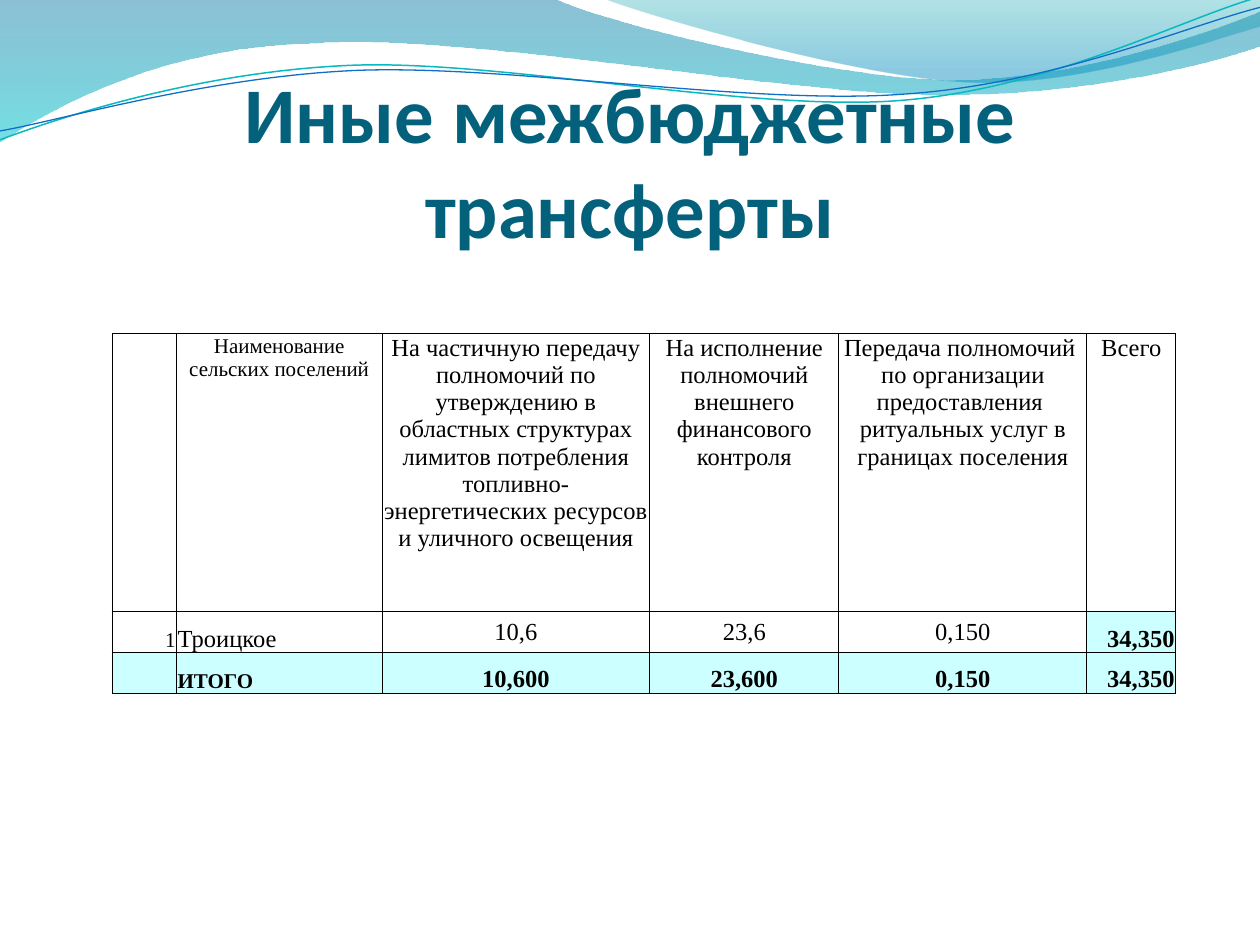
import math

import pptx
import pptx.dml.color
import pptx.enum.text
import pptx.oxml
import pptx.oxml.ns
import pptx.util
from pptx.util import Cm, Pt

ALIGN = pptx.enum.text.PP_ALIGN
ANCHOR = pptx.enum.text.MSO_ANCHOR
TILT = 2.7
TILT_CENTER = (12.7, 1.47)


def color(value):
    return pptx.dml.color.RGBColor.from_string(value)


def assign(obj, values):
    for name, value in values.items():
        setattr(obj, name, value)


def rotate(point, degrees, center):
    c, n = math.cos(math.radians(degrees)), math.sin(math.radians(degrees))
    dx, dy = point[0] - center[0], point[1] - center[1]
    return center[0] + dx * c - dy * n, center[1] + dx * n + dy * c


class Deck:
    title_font = {"name": "Calibri", "size": Pt(45), "bold": True}
    table_font = "Times New Roman"
    title_color, text_color, border_color, total_fill = "04617B", "000000", "000000", "CCFFFF"

    def __init__(self, prs):
        self.s = prs.slides.add_slide(prs.slide_layouts[5])

    def freeform(self, start, segments, close):
        nodes = [(Cm(x), Cm(y)) for segment in segments for x, y in segment]
        builder = self.s.shapes.build_freeform(Cm(start[0]), Cm(start[1]))
        builder.add_line_segments(nodes, close=close)
        sp = builder.convert_to_shape()
        sp.shadow.inherit = False
        lines = iter(list(sp._element.iter(pptx.oxml.ns.qn("a:lnTo"))))
        for segment in segments:
            group = [next(lines) for _ in segment]
            if len(group) == 3:
                bezier = pptx.oxml.parse_xml(f'<a:cubicBezTo {pptx.oxml.ns.nsdecls("a")}/>')
                group[0].addprevious(bezier)
                for line in group:
                    bezier.append(line[0])
                    line.getparent().remove(line)
        return sp

    def wave(self, start, segments, stops):
        sp = self.freeform(start, [*segments, [start]], True)
        sp.line.fill.background()
        sp.fill.gradient()
        sp.fill.gradient_angle = 270
        for stop, (position, rgb, opacity) in zip(sp.fill.gradient_stops, stops):
            stop.position = position
            stop.color.rgb = color(rgb)
            clr = stop._gs.find(pptx.oxml.ns.qn("a:srgbClr"))
            clr.append(pptx.oxml.parse_xml(
                f'<a:alpha {pptx.oxml.ns.nsdecls("a")} val="{opacity * 1000}"/>'))

    def ribbon(self, start, segments, rgb, width):
        level = [[rotate(point, TILT, TILT_CENTER) for point in segment] for segment in segments]
        sp = self.freeform(rotate(start, TILT, TILT_CENTER), level, False)
        sp.rotation = 360 - TILT
        sp.fill.background()
        sp.line.color.rgb = color(rgb)
        sp.line.width = Pt(width)

    def title(self, text, left, top, width, height):
        sp = self.s.shapes.title
        self.s.shapes._spTree.append(sp._element)
        assign(sp, {"left": Cm(left), "top": Cm(top), "width": Cm(width), "height": Cm(height)})
        tf = sp.text_frame
        assign(tf, {"margin_left": 0, "margin_right": 0, "margin_top": Cm(0.13), "margin_bottom": 0,
                    "word_wrap": True, "vertical_anchor": ANCHOR.BOTTOM,
                    "auto_size": pptx.enum.text.MSO_AUTO_SIZE.NONE})
        p = tf.paragraphs[0]
        p.alignment = ALIGN.CENTER
        r = p.add_run()
        r.text = text
        assign(r.font, self.title_font)
        r.font.color.rgb = color(self.title_color)

    def cell(self, cell, text, size, align, anchor, total):
        assign(cell, {"margin_left": Cm(0.02), "margin_right": Cm(0.02), "margin_top": Cm(0.02),
                      "margin_bottom": 0, "vertical_anchor": anchor})
        for side in "LRTB":
            cell._tc.get_or_add_tcPr().append(pptx.oxml.parse_xml(
                f'<a:ln{side} {pptx.oxml.ns.nsdecls("a")} w="{Pt(0.5)}"><a:solidFill>'
                f'<a:srgbClr val="{self.border_color}"/></a:solidFill></a:ln{side}>'))
        if total:
            cell.fill.solid()
            cell.fill.fore_color.rgb = color(self.total_fill)
        else:
            cell.fill.background()
        if not text:
            return
        p = cell.text_frame.paragraphs[0]
        p.alignment = align
        r = p.add_run()
        r.text = text
        assign(r.font, {"name": self.table_font, "size": Pt(size), "bold": total})
        r.font.color.rgb = color(self.text_color)

    def table(self, rows, left, top, widths, heights):
        frame = self.s.shapes.add_table(len(rows), len(widths), Cm(left), Cm(top),
                                        Cm(sum(widths)), Cm(sum(heights)))
        table = frame.table
        assign(table, {"first_row": False, "horz_banding": False})
        for column, width in zip(table.columns, widths):
            column.width = Cm(width)
        for row, height in zip(table.rows, heights):
            row.height = Cm(height)
        body_align = [ALIGN.RIGHT, ALIGN.LEFT, ALIGN.CENTER, ALIGN.CENTER, ALIGN.CENTER, ALIGN.RIGHT]
        small = {(0, 1), (1, 0), (2, 1)}
        last_row, last_col = len(rows) - 1, len(widths) - 1
        for i, row in enumerate(rows):
            for j, text in enumerate(row):
                middle = i == 1 and 2 <= j < last_col
                anchor = ANCHOR.TOP if i == 0 else ANCHOR.MIDDLE if middle else ANCHOR.BOTTOM
                align = ALIGN.CENTER if i == 0 else body_align[j]
                total = i == last_row or (i > 0 and j == last_col)
                self.cell(table.cell(i, j), text, 12 if (i, j) in small else 14, align, anchor, total)


def main():
    prs = pptx.Presentation()
    assign(prs, {"slide_width": Cm(25.4), "slide_height": Cm(19.05)})
    deck = Deck(prs)
    deck.wave((0, 0), [[(11.18, -0.03)],
                       [(12.09, 0.43), (16.87, 1.6), (19.25, 1.6)],
                       [(21.67, 1.6), (24.33, 0.66), (25.4, 0.23)],
                       [(25.43, 0.91)],
                       [(24.97, 1.12), (22.1, 1.93), (18.95, 1.91)],
                       [(15.8, 1.91), (9.7, 0.71), (6.53, 0.86)],
                       [(3.28, 0.91), (1.17, 2.11), (-0.03, 2.87)]],
              [(0, "0074A1", 45), (1, "00C6CF", 55)])
    deck.wave((12.17, -0.03), [[(12.93, 0.28), (17.32, 1.57), (19.53, 1.65)],
                               [(21.74, 1.75), (24.41, 0.81), (25.4, 0.53)],
                               [(25.4, 0)]],
              [(0, "00A1A9", 30), (0.8, "008BBF", 45)])
    deck.ribbon((0, 2.82), [[(1.22, 2.36), (4.01, 1.45), (7.04, 1.32)],
                            [(10.03, 1.19), (15.06, 2.26), (18.11, 2.03)],
                            [(21.16, 1.8), (23.83, 0.38), (25.35, -0.05)]], "0AB8BF", 0.85)
    deck.ribbon((0, 2.64), [[(1.19, 2.44), (4.17, 1.55), (7.19, 1.42)],
                            [(10.24, 1.3), (15.16, 2.13), (18.21, 1.9)],
                            [(21.23, 1.7), (23.9, 0.53), (25.4, 0.15)]], "0F6FC6", 0.75)
    deck.title("Иные межбюджетные трансферты", 1.27, 1.95, 22.86, 3.17)
    deck.table([
        ["", "Наименование сельских поселений",
         "На частичную передачу полномочий по утверждению в областных структурах лимитов "
         "потребления топливно-энергетических ресурсов и уличного освещения",
         "На исполнение полномочий внешнего финансового контроля",
         "Передача полномочий  по организации предоставления  ритуальных услуг в границах поселения",
         "Всего"],
        ["1", "Троицкое", "10,6", "23,6", "0,150", "34,350"],
        ["", "ИТОГО", "10,600", "23,600", "0,150", "34,350"],
    ], 2.26, 6.73, [1.3, 4.14, 5.4, 3.81, 5, 1.79], [5.59, 0.83, 0.82])
    prs.save("out.pptx")


if __name__ == "__main__":
    main()
